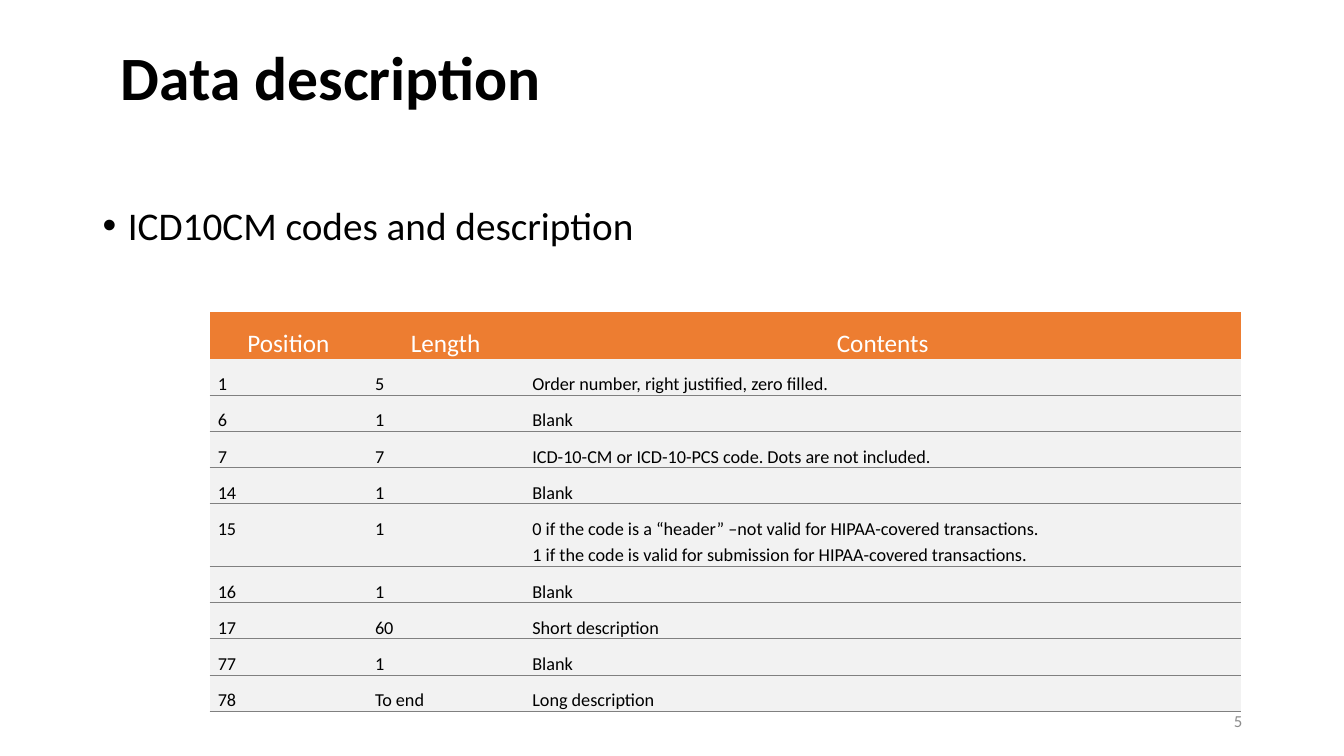
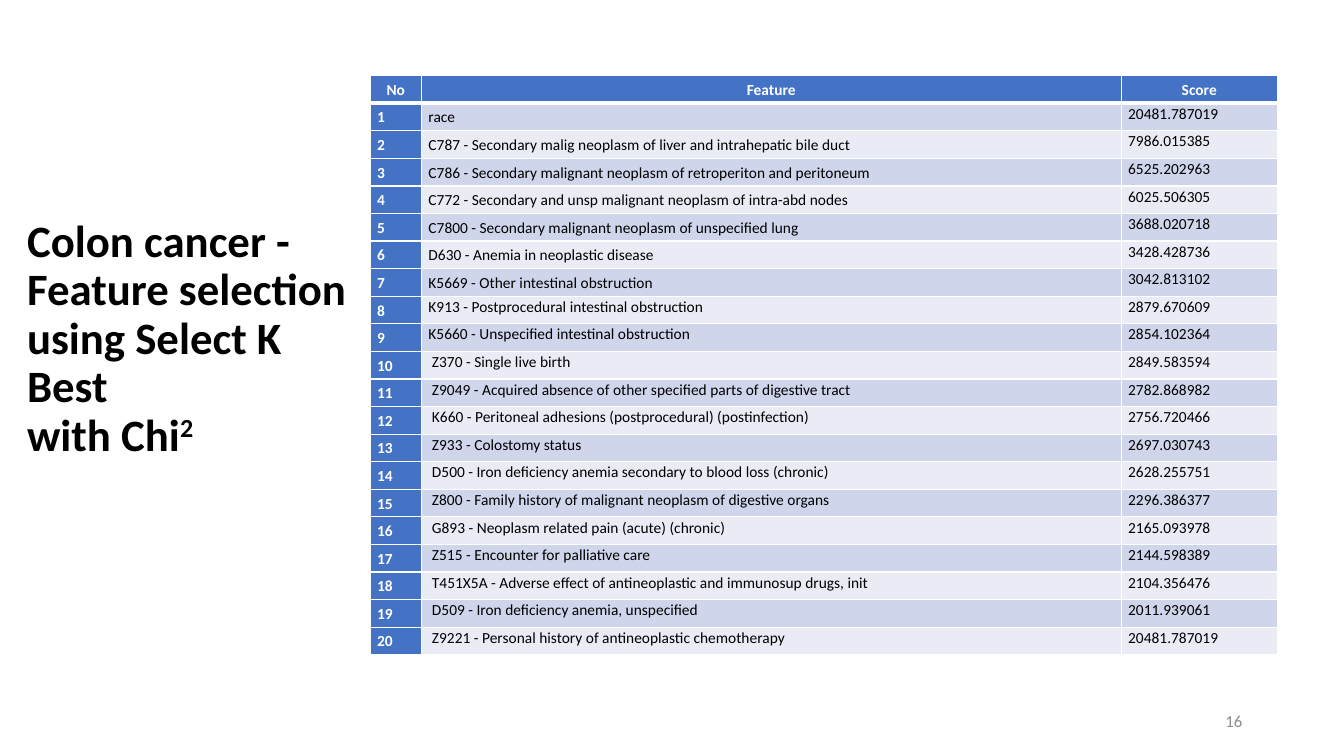
from lxml.etree import SubElement
from pptx import Presentation
from pptx.dml.color import RGBColor as RGB
from pptx.enum.text import MSO_ANCHOR as Anchor, PP_ALIGN as Align
from pptx.oxml.ns import qn
from pptx.util import Pt

PX = 9144  # EMU per px, 100 px to the inch
FONT = "Calibri"
BLACK = RGB(0x00, 0x00, 0x00)
WHITE = RGB(0xFF, 0xFF, 0xFF)
GREY = RGB(0x8C, 0x8C, 0x8C)
RULE = RGB(0x80, 0x80, 0x80)
PALE = RGB(0xF2, 0xF2, 0xF2)
ORANGE = RGB(0xED, 0x7D, 0x31)
BLUE = RGB(0x44, 0x72, 0xC4)
BANDS = RGB(0xE9, 0xEB, 0xF5), RGB(0xCF, 0xD5, 0xEA)

LAYOUT = [
    ("Position", "Length", "Contents"),
    ("1", "5", "Order number, right justified, zero filled."),
    ("6", "1", "Blank"),
    ("7", "7", "ICD-10-CM or ICD-10-PCS code. Dots are not included."),
    ("14", "1", "Blank"),
    ("15", "1", "0 if the code is a “header” –not valid for HIPAA-covered transactions.\n"
                "1 if the code is valid for submission for HIPAA-covered transactions."),
    ("16", "1", "Blank"),
    ("17", "60", "Short description"),
    ("77", "1", "Blank"),
    ("78", "To end", "Long description"),
]

SCORES = [
    ("race", "20481.787019"),
    ("C787 - Secondary malig neoplasm of liver and intrahepatic bile duct", "7986.015385"),
    ("C786 - Secondary malignant neoplasm of retroperiton and peritoneum", "6525.202963"),
    ("C772 - Secondary and unsp malignant neoplasm of intra-abd nodes", "6025.506305"),
    ("C7800 - Secondary malignant neoplasm of unspecified lung", "3688.020718"),
    ("D630 - Anemia in neoplastic disease", "3428.428736"),
    ("K5669 - Other intestinal obstruction", "3042.813102"),
    ("K913 - Postprocedural intestinal obstruction", "2879.670609"),
    ("K5660 - Unspecified intestinal obstruction", "2854.102364"),
    (" Z370 - Single live birth", "2849.583594"),
    (" Z9049 - Acquired absence of other specified parts of digestive tract", "2782.868982"),
    (" K660 - Peritoneal adhesions (postprocedural) (postinfection)", "2756.720466"),
    (" Z933 - Colostomy status", "2697.030743"),
    (" D500 - Iron deficiency anemia secondary to blood loss (chronic)", "2628.255751"),
    (" Z800 - Family history of malignant neoplasm of digestive organs", "2296.386377"),
    (" G893 - Neoplasm related pain (acute) (chronic)", "2165.093978"),
    (" Z515 - Encounter for palliative care", "2144.598389"),
    (" T451X5A - Adverse effect of antineoplastic and immunosup drugs, init", "2104.356476"),
    (" D509 - Iron deficiency anemia, unspecified", "2011.939061"),
    (" Z9221 - Personal history of antineoplastic chemotherapy", "20481.787019"),
]


def dress(frame, size, color, bold=False, align=Align.LEFT, gap=1.0):
    """Format every paragraph and run of a filled text frame."""
    for para in frame.paragraphs:
        para.alignment = align
        para.line_spacing = gap
        for run in para.runs:
            font = run.font
            font.name, font.size, font.bold = FONT, Pt(size), bold
            font.color.rgb = color


def edge(cell, color, side, top, bottom):
    """Set the cell's border widths in points; 0 means no line."""
    props = cell._tc.get_or_add_tcPr()
    widths = {"a:lnL": side, "a:lnR": side, "a:lnT": top, "a:lnB": bottom}
    for spot, (tag, width) in enumerate(widths.items()):
        line = SubElement(props, qn(tag), w=str(Pt(width)))
        props.insert(spot, line)
        if width:
            fill = SubElement(line, qn("a:solidFill"))
            SubElement(fill, qn("a:srgbClr"), val=str(color))
        else:
            SubElement(line, qn("a:noFill"))


class Deck:
    def __init__(self):
        self.show = Presentation()
        self.show.slide_width, self.show.slide_height = 1333 * PX, 750 * PX

    def page(self, number):
        self.slide = self.show.slides.add_slide(self.show.slide_layouts[6])
        self.text(str(number), (942, 695, 300, 40), 12, GREY,
                  anchor=Anchor.MIDDLE, align=Align.RIGHT)

    def text(self, words, box, size, color=BLACK, anchor=Anchor.TOP, **style):
        frame = self.slide.shapes.add_textbox(*(n * PX for n in box)).text_frame
        frame.word_wrap = True
        frame.vertical_anchor = anchor
        frame.text = words
        dress(frame, size, color, **style)
        return frame

    def title(self, words, box, size, power=""):
        """Add a bold title, with an optional superscript at its end."""
        style = dict(bold=True, gap=0.9)
        frame = self.text(words, box, size, anchor=Anchor.MIDDLE, **style)
        if power:
            run = frame.paragraphs[0].add_run()
            run.text = power
            run._r.get_or_add_rPr().set("baseline", "30000")
            dress(frame, size, BLACK, **style)

    def bullet(self, words, box, size):
        para = self.text(words, box, size, gap=0.9).paragraphs[0]
        para.space_before = Pt(10)
        props = para._p.get_or_add_pPr()
        props.set("marL", str(25 * PX))
        props.set("indent", str(-25 * PX))
        SubElement(props, qn("a:buFont"), typeface="Arial")
        SubElement(props, qn("a:buChar"), char="•")

    def table(self, rows, box, cols, look, lines, pads, tall=None):
        """look(row, col) gives fill, anchor and text style of a cell;
        lines is colour and widths at the sides, under the head, under a row;
        tall maps a row to its own height."""
        grid = self.slide.shapes.add_table(
            len(rows), len(cols), *(n * PX for n in box)).table
        grid.first_row = grid.horz_banding = False
        for col, width in zip(grid.columns, cols):
            col.width = width * PX
        for r, height in (tall or {}).items():
            grid.rows[r].height = height * PX
        tint, side, head, rule = lines
        for r, row in enumerate(rows):
            for c, words in enumerate(row):
                cell = grid.cell(r, c)
                fill, anchor, style = look(r, c)
                cell.fill.solid()
                cell.fill.fore_color.rgb = fill
                cell.vertical_anchor = anchor
                cell.margin_left = cell.margin_right = pads[0] * PX
                cell.margin_top, cell.margin_bottom = pads[1] * PX, 0
                cell.text_frame.text = words
                dress(cell.text_frame, **style)
                edge(cell, tint, side,
                     side if r == 0 else head if r == 1 else rule,
                     rule if r else head)


def plain(r, c):
    if r == 0:
        return ORANGE, Anchor.MIDDLE, dict(size=18, color=WHITE, align=Align.CENTER, gap=1.15)
    return PALE, Anchor.TOP, dict(size=13, color=BLACK, gap=1.15)


def banded(r, c):
    style = dict(size=11, color=BLACK, gap=1.07)
    if r == 0 or c == 0:
        style.update(color=WHITE, bold=True, align=Align.LEFT if r else Align.CENTER)
        return BLUE, Anchor.MIDDLE, style
    return BANDS[r % 2], Anchor.MIDDLE if c == 1 and r <= 7 else Anchor.TOP, style


def main():
    deck = Deck()

    deck.page(5)
    deck.title("Data description", (110, 19, 1113, 122), 44)
    deck.table(LAYOUT, (208, 310, 1023, 360), (156, 156, 711), plain,
               (RULE, 0, 0, 0.75), (8, 11), tall={0: 46, 5: 62})
    deck.bullet("ICD10CM codes and description", (92, 200, 1150, 476), 28)

    deck.page(16)
    deck.title("Colon cancer -\vFeature selection\vusing Select K Best\vwith Chi",
               (17, 208, 358, 258), 32, power="2")
    ranks = [(str(n), *row) for n, row in enumerate(SCORES, 1)]
    deck.table([("No", "Feature", "Score")] + ranks, (367, 75, 900, 575),
               (51, 694, 155), banded, (WHITE, 1, 3, 1), (7, 0))

    deck.show.save("out.pptx")


if __name__ == "__main__":
    main()
